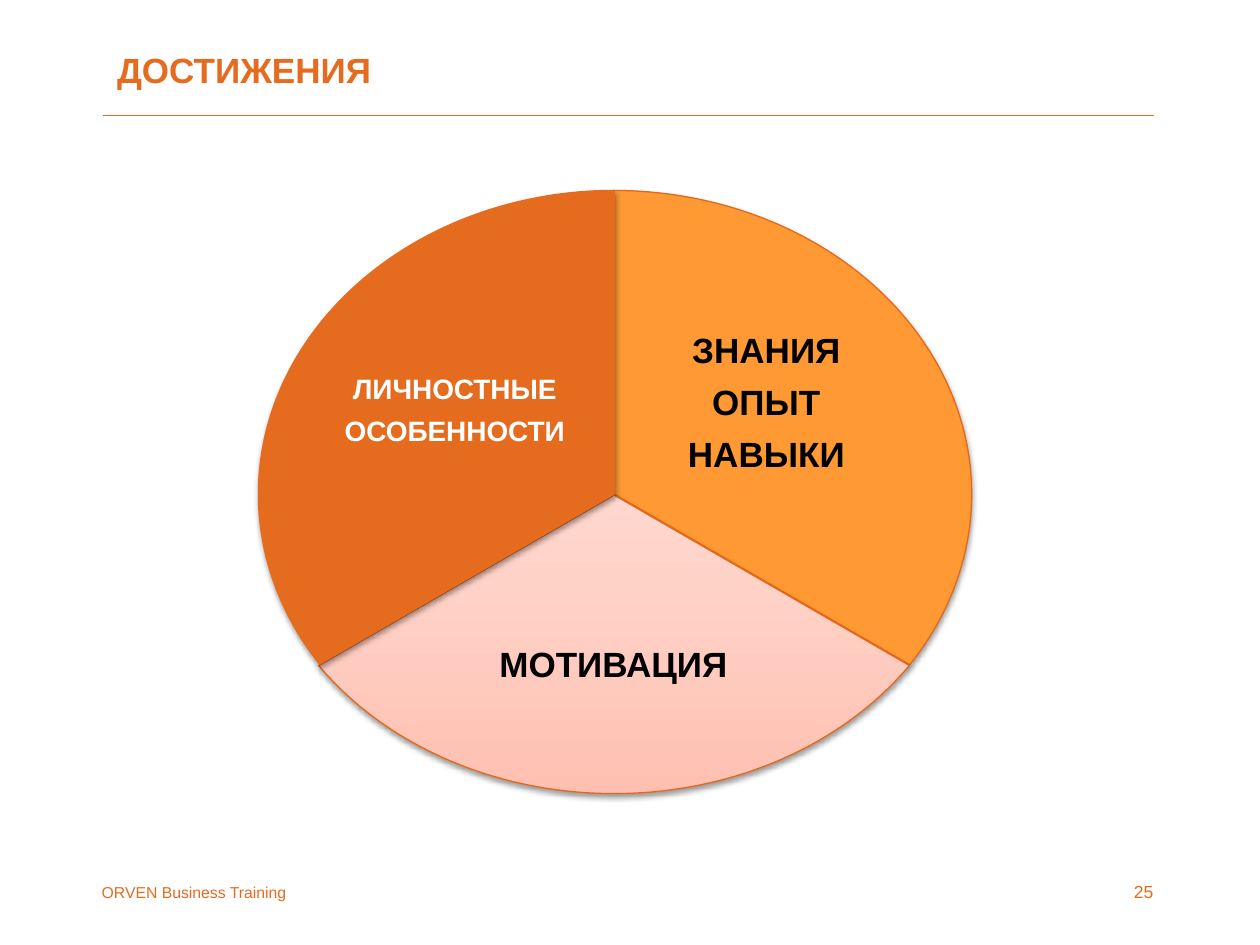
from copy import deepcopy
from lxml.etree import SubElement
from pptx import Presentation
from pptx.dml.color import RGBColor
from pptx.enum.shapes import MSO_CONNECTOR, MSO_SHAPE
from pptx.enum.text import MSO_ANCHOR, PP_ALIGN
from pptx.oxml.ns import qn
from pptx.util import Cm, Pt

COLORS = {
    "accent": "E56B1F",
    "outline": "E56819",
    "amber": "FF9933",
    "black": "000000",
    "white": "FFFFFF",
}
PINK_STOPS = [(0, "FFC0B1"), (0.35, "FFD2C8"), (1, "FFEEEA")]


def add_text(text, place, size, color="accent", bold=False, align=PP_ALIGN.LEFT,
             anchor=MSO_ANCHOR.TOP, inset=None, spacing=None):
    box = slide.shapes.add_textbox(*[Cm(length) for length in place])
    frame = box.text_frame
    frame.word_wrap = True
    frame.vertical_anchor = anchor
    if inset is not None:
        frame.margin_left = frame.margin_right = Cm(inset)
        frame.margin_top = frame.margin_bottom = Cm(inset)
    for index, line in enumerate(text.split("\n")):
        para = frame.paragraphs[0] if index == 0 else frame.add_paragraph()
        para.alignment = align
        if spacing:
            para.line_spacing = spacing
            para.space_after = Pt(0.4 * size)
        span = para.add_run()
        span.text = line
        span.font.name = "Arial"
        span.font.size = Pt(size)
        span.font.bold = bold
        span.font.color.rgb = RGBColor.from_string(COLORS[color])


def add_sector(place, start, end, fill, outline):
    sector = slide.shapes.add_shape(MSO_SHAPE.PIE, *[Cm(length) for length in place])
    sector.adjustments[0] = start * 0.6
    sector.adjustments[1] = end * 0.6
    if fill == "pink":
        sector.fill.gradient()
        sector.fill.gradient_angle = 90
        first = sector._element.spPr.find(".//" + qn("a:gs"))
        first.addnext(deepcopy(first))
        for stop, (position, color) in zip(sector.fill.gradient_stops, PINK_STOPS):
            stop.position = position
            stop.color.rgb = RGBColor.from_string(color)
    else:
        sector.fill.solid()
        sector.fill.fore_color.rgb = RGBColor.from_string(COLORS[fill])
    sector.line.color.rgb = RGBColor.from_string(COLORS[outline])
    sector.line.width = Pt(0.75)
    sector.shadow.inherit = False
    effects = sector._element.spPr.find(qn("a:effectLst"))
    shadow = SubElement(effects, qn("a:outerShdw"), blurRad=str(Pt(3.1)),
                        dist=str(Pt(1.6)), dir="5400000", rotWithShape="0")
    tint = SubElement(shadow, qn("a:srgbClr"), val=COLORS["black"])
    SubElement(tint, qn("a:alpha"), val="38000")


deck = Presentation()
deck.slide_width, deck.slide_height = Cm(25.4), Cm(19.05)
slide = deck.slides.add_slide(deck.slide_layouts[6])

rule = slide.shapes.add_connector(MSO_CONNECTOR.STRAIGHT, Cm(2.08), Cm(2.33), Cm(23.27), Cm(2.33))
rule.line.color.rgb = RGBColor.from_string(COLORS["accent"])
rule.line.width = Pt(1)
SubElement(rule._element.spPr, qn("a:effectLst"))

add_text("25", (22.23, 17.63, 1.27, 0.69), 10, align=PP_ALIGN.RIGHT)
add_text("ORVEN Business Training", (1.8, 17.68, 5.16, 0.64), 9)
add_text("ДОСТИЖЕНИЯ", (2.11, 0.48, 22.71, 1.83), 20, bold=True, anchor=MSO_ANCHOR.MIDDLE)

sectors = [
    ((5.16, 3.84, 14.43, 12.24), 270, 30, "amber", "outline",
     "ЗНАНИЯ\nОПЫТ\nНАВЫКИ", (13, 6.1, 4.9, 4.09), 20, "black"),
    ((5.13, 3.96, 14.5, 12.04), 30, 150, "pink", "outline",
     "МОТИВАЦИЯ", (9.09, 11.56, 6.55, 3.73), 20, "black"),
    ((5.21, 3.84, 14.35, 12.24), 150, 270, "accent", "accent",
     "ЛИЧНОСТНЫЕ\nОСОБЕННОСТИ", (6.73, 6.25, 4.88, 4.09), 16, "white"),
]
for place, start, end, fill, outline, label, label_place, size, color in sectors:
    add_sector(place, start, end, fill, outline)
    add_text(label, label_place, size, color=color, bold=True, align=PP_ALIGN.CENTER,
             anchor=MSO_ANCHOR.MIDDLE, inset=0.06, spacing=0.9)

deck.save("out.pptx")
